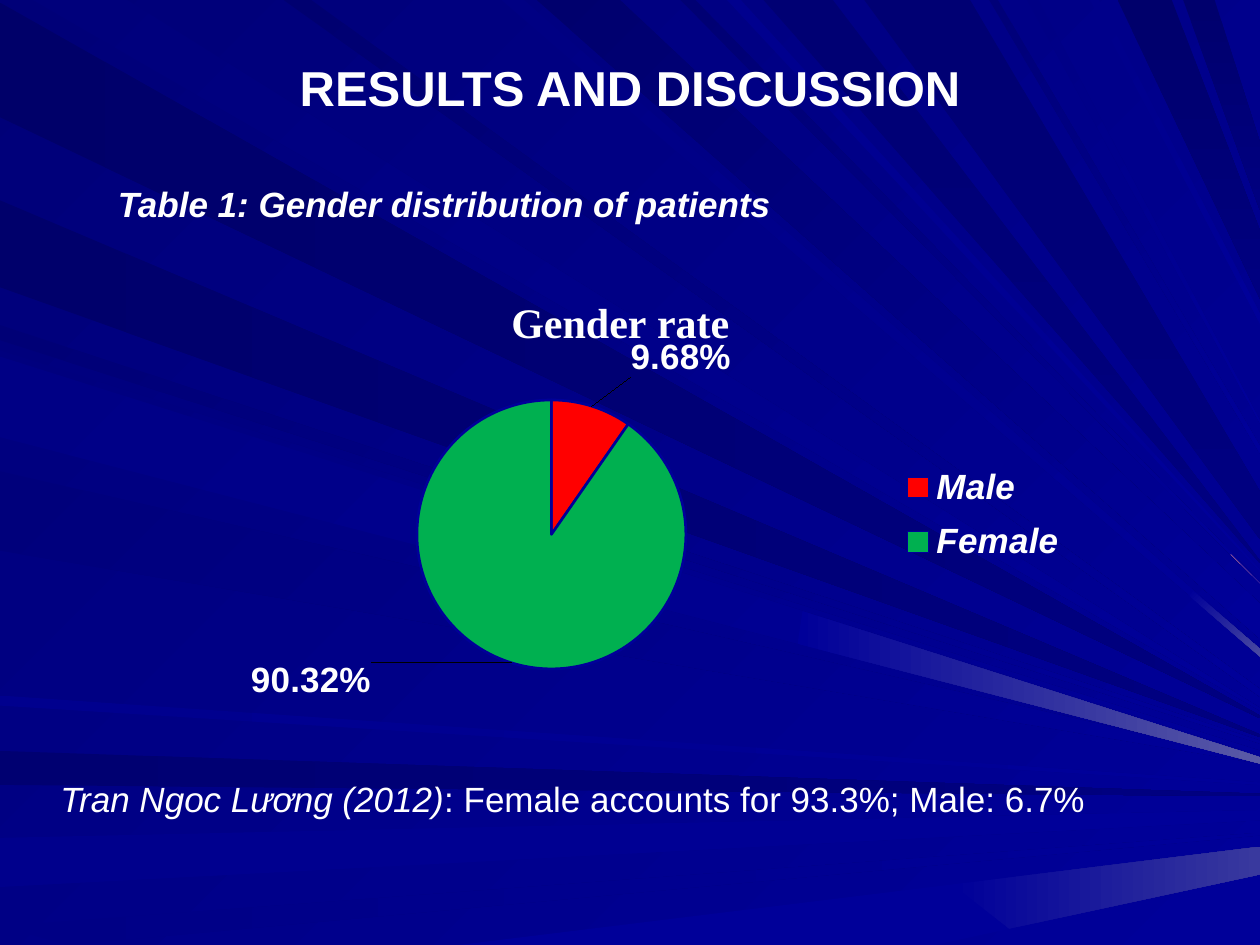
from lxml import etree
from pptx import Presentation
from pptx.chart.data import CategoryChartData
from pptx.dml.color import RGBColor
from pptx.enum.chart import XL_CHART_TYPE, XL_LABEL_POSITION as LabelPos, XL_LEGEND_POSITION as LegendPos
from pptx.enum.text import MSO_ANCHOR as Anchor, PP_ALIGN as Align
from pptx.oxml.ns import qn
from pptx.util import Pt

FONT = "Arial"
COLORS = {
    "white": "FFFFFF", "male": "FF0000", "female": "00B050", "pink": "FF9999",
    "deep": "000080", "bright": "000099",
    "glow1": "39399E", "glow2": "4A4AA1", "glow3": "5A5AA6",
}
# Navy shades are named after their blue component.
COLORS.update({shade: "0000" + shade for shade in (
    "69 6B 6D 70 71 73 76 78 7B 7E 83 85 8A 8C 8E").split()})

# Rays run from the border to the right edge, in thousandths of the box width:
# border start, border end, height at the right edge, colours, half thickness there.
# Border places count rightwards along the top and negative down the left side.
RAYS = [
    (-93, -2, 569, "69 deep"), (26, 101, 563, "7B bright"),
    (-623, -596, 631, "71 deep"), (-704, -665, 647, "8C bright", 4),
    (-804, -735, 662, "85 bright"), (-1492, -1114, 683, "bright bright", 11),
    (-270, -258, 589, "76 bright"), (-228, -159, 584, "6B deep"),
    (398, 416, 518, "83 bright", 3), (426, 492, 493, "6D bright", 14),
    (540, 552, 463, "73 bright"), (606, 661, 446, "73 deep"),
    (887, 930, 210, "6B deep", 27), (939, 964, 140, "6D deep", 27),
    (-342, -278, 599, "7E bright", 3), (-437, -374, 605, "7B bright"),
    (-560, -552, 622, "8E bright"), (225, 247, 550, "70 bright", 3),
    (577, 588, 453, "8E bright"), (686, 770, 409, "73 deep", 19),
    (785, 792, 357, "78 bright", 3), (815, 824, 335, "85 bright"),
    (865, 872, 253, "8A bright", 4), (-347, -283, 603, "85 bright", 3),
]
GLOWS = [
    ("bright glow1", 0, [(756, 702), (1000, 672), (1000, 694), (801, 737)]),
    ("bright glow2", 45, [(944, 473), (947, 469), (1000, 515), (1000, 521)]),
    ("pink pink", 0, [(976.5, 440), (977, 440), (1000, 463)]),
    ("bright glow3", 0, [(633, 511), (637, 485), (1000, 601), (1000, 606)]),
]


def rgb(name):
    return RGBColor.from_string(COLORS[name])


def paint(fill, first, last, angle):
    if first == last:
        fill.solid()
        fill.fore_color.rgb = rgb(first)
        return
    fill.gradient()
    fill.gradient_angle = (360 - angle) % 360
    for stop, name in zip(fill.gradient_stops, (first, last)):
        stop.color.rgb = rgb(name)


def style_font(font, size, name=FONT, bold=False, italic=False):
    font.name, font.size, font.bold, font.italic = name, Pt(size), bold, italic
    font.color.rgb = rgb("white")


def add_text(page, box, spans, size, align=Align.LEFT, anchor=Anchor.TOP,
             insets=(7.2, 3.6, 7.2, 3.6), wrap=True):
    """Each span is a text and its font options; insets run left, top, right, bottom."""
    frame = page.shapes.add_textbox(*map(Pt, box)).text_frame
    frame.word_wrap, frame.vertical_anchor = wrap, anchor
    (frame.margin_left, frame.margin_top,
     frame.margin_right, frame.margin_bottom) = map(Pt, insets)
    para = frame.paragraphs[0]
    para.alignment = align
    for text, options in spans:
        span = para.add_run()
        span.text = text
        style_font(span.font, size, **options)


def border_point(place):
    """Turn a border place into x and y; past the left side it runs along the bottom."""
    if place >= 0:
        return place, 0
    return max(0, -place - 750), min(-place, 750)


def ray_angle(place, last):
    if last == "bright":
        return 45 if place > -500 else 0
    return 90 if place > 0 else 0


def add_polygon(page, box, corners, colors, angle):
    left, top, width, _ = box
    start, *others = [(Pt(left + x * width / 1000), Pt(top + y * width / 1000))
                      for x, y in corners]
    outline = page.shapes.build_freeform(*start)
    outline.add_line_segments(others, close=True)
    polygon = outline.convert_to_shape()
    polygon.shadow.inherit = False
    polygon.line.fill.background()
    paint(polygon.fill, *colors, angle)


def add_rays(page, box):
    for start, end, tip, colors, *thickness in RAYS:
        half = thickness[0] if thickness else 1
        corners = [border_point(start), border_point(end), (1000, tip - half), (1000, tip + half)]
        first, last = colors.split()
        add_polygon(page, box, corners, (first, last), ray_angle(start, last))
    for colors, angle, corners in GLOWS:
        add_polygon(page, box, corners, colors.split(), angle)


def set_layout(parent, index, **values):
    """Give a chart part a manual layout as child number index."""
    for old in parent.findall(qn("c:layout")):
        parent.remove(old)
    layout = etree.Element(qn("c:layout"))
    manual = etree.SubElement(layout, qn("c:manualLayout"))
    for tag, value in values.items():
        etree.SubElement(manual, qn("c:" + tag)).set("val", str(value))
    parent.insert(index, layout)


def add_gender_pie(page, box):
    data = CategoryChartData(number_format="0.00%")
    data.categories = ["Male", "Female"]
    data.add_series("Series 1", [0.0968, 0.9032])
    chart = page.shapes.add_chart(XL_CHART_TYPE.PIE, *map(Pt, box), data).chart
    style_font(chart.font, 10)

    chart.has_title = True
    title = chart.chart_title.text_frame
    title.text = "Gender rate"
    style_font(title.paragraphs[0].runs[0].font, 24, name="Times New Roman", bold=True)

    chart.has_legend = True
    legend = chart.legend
    legend.position, legend.include_in_layout = LegendPos.RIGHT, False
    style_font(legend.font, 20, bold=True, italic=True)
    edges = {"xMode": "edge", "yMode": "edge"}
    set_layout(legend._element, 1, **edges, x=0.8, y=0.41, w=0.19, h=0.28)

    plot = chart.plots[0]
    plot.vary_by_categories = True
    plot_area = chart._chartSpace.chart.plotArea
    set_layout(plot_area, 0, layoutTarget="inner", **edges, x=0.07, y=0.29, w=0.71, h=0.61)

    series = plot.series[0]
    labels = series.data_labels
    labels.show_value = True
    labels.number_format, labels.number_format_is_linked = "0.00%", False
    style_font(labels.font, 20, bold=True)
    for index, color in enumerate(("male", "female")):
        point = series.points[index]
        paint(point.format.fill, color, color, 0)
        point.format.line.color.rgb = rgb("bright")
        point.format.line.width = Pt(1.5)
        style_font(point.data_label.font, 20, bold=True)
        point.data_label.position = LabelPos.OUTSIDE_END
    shifts = [(0.04, -0.05), (-0.15, -0.02)]
    for label, (x, y) in zip(series._element.iter(qn("c:dLbl")), shifts):
        set_layout(label, 1, x=x, y=y)


def main():
    deck = Presentation()
    deck.slide_width, deck.slide_height = Pt(720), Pt(540)
    page = deck.slides.add_slide(deck.slide_layouts[6])
    paint(page.background.fill, "78", "bright", 45)
    add_rays(page, (0, 0, 720, 540))
    add_text(page, (0, 0, 720, 132), [("RESULTS AND DISCUSSION", {"bold": True})], 28,
             align=Align.CENTER, anchor=Anchor.MIDDLE, insets=(7.2, 3.6, 7.2, 36))
    add_text(page, (0, 402.5, 720, 98),
             [("Tran Ngoc Lương (2012)", {"italic": True}),
              (": Female accounts for 93.3%; Male: 6.7%", {})], 20, insets=(34.5, 42, 7.2, 3.6))
    add_text(page, (56, 100, 396, 32),
             [("Table 1: Gender distribution of patients", {"bold": True, "italic": True})], 20,
             align=Align.CENTER, anchor=Anchor.MIDDLE, wrap=False)
    add_gender_pie(page, (92, 155.5, 525, 252))
    deck.save("out.pptx")


if __name__ == "__main__":
    main()
